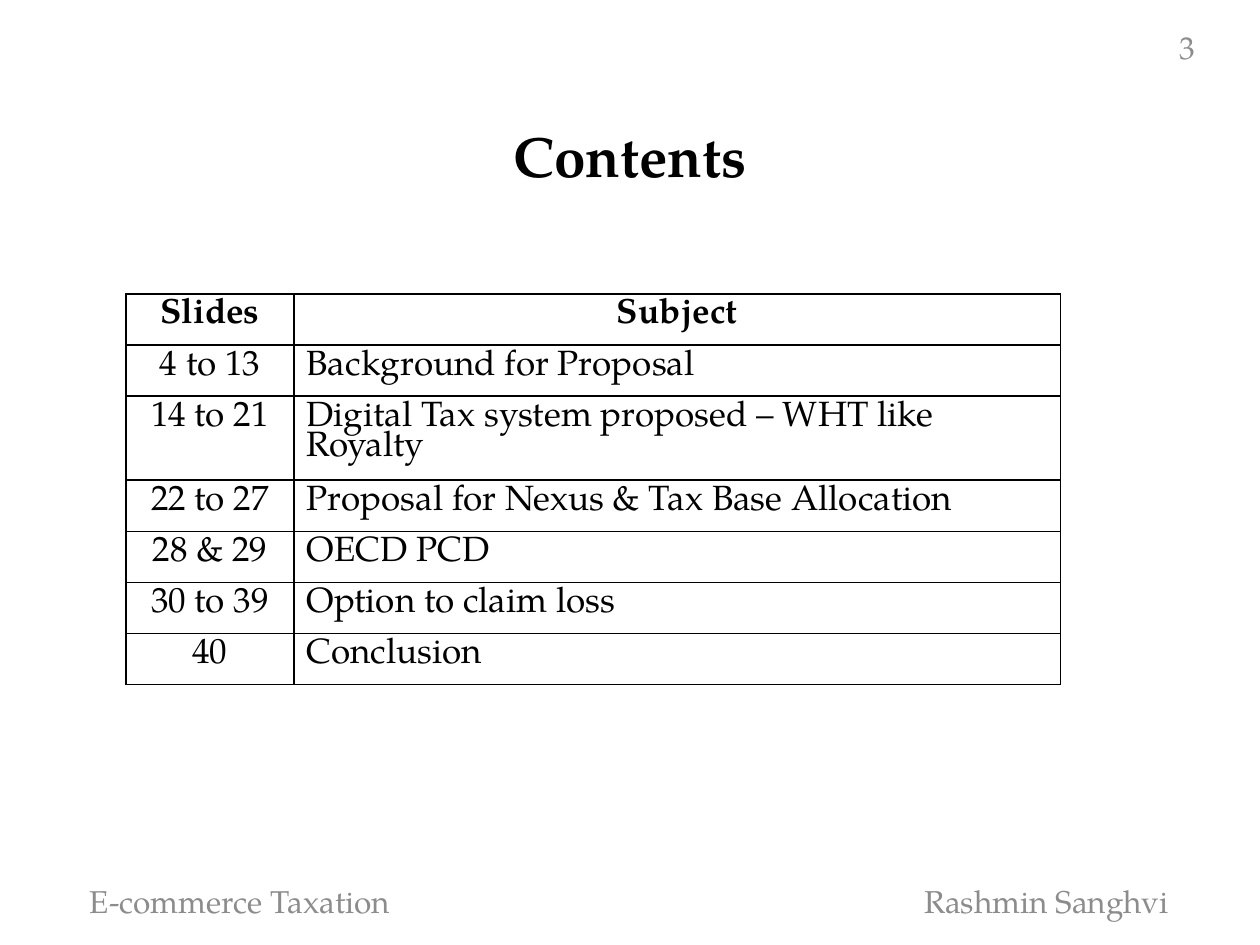
from lxml.etree import SubElement
from pptx import Presentation
from pptx.dml.color import RGBColor
from pptx.enum.text import MSO_ANCHOR, PP_ALIGN
from pptx.oxml.ns import qn
from pptx.util import Pt

# Content
TITLE = "Contents"
HEADINGS = ("Slides", "Subject")
CONTENTS = [
    ("4 to 13", "Background for Proposal"),
    ("14 to 21", "Digital Tax system proposed – WHT like Royalty"),
    ("22 to 27", "Proposal for Nexus & Tax Base Allocation"),
    ("28 & 29", "OECD PCD"),
    ("30 to 39", "Option to claim loss"),
    ("40", "Conclusion"),
]
FOOTER = ("E-commerce Taxation", "Rashmin Sanghvi")
PAGE_NUMBER = "3"

# Style
FONT = "TeX Gyre Pagella"
BLACK, GREY = "000000", "8C8C8C"
COLUMN_WIDTHS = (96, 438)
ROW_HEIGHT, TALL_ROW_HEIGHT = 29.2, 48


def add_run(paragraph, text, size, colour, bold=False):
    run = paragraph.add_run()
    run.text = text
    run.font.name, run.font.size, run.font.bold = FONT, Pt(size), bold
    run.font.color.rgb = RGBColor.from_string(colour)


def add_box(slide, left, top, width, height, inset=7.2):
    frame = slide.shapes.add_textbox(Pt(left), Pt(top), Pt(width), Pt(height)).text_frame
    frame.word_wrap = True
    frame.vertical_anchor = MSO_ANCHOR.MIDDLE
    frame.margin_left = frame.margin_right = Pt(inset)
    return frame.paragraphs[0]


def add_borders(cell):
    properties = cell._tc.get_or_add_tcPr()
    for side in ("a:lnL", "a:lnR", "a:lnT", "a:lnB"):
        line = SubElement(properties, qn(side), w=str(Pt(1)))
        fill = SubElement(line, qn("a:solidFill"))
        SubElement(fill, qn("a:srgbClr"), val=BLACK)


def fill_cell(cell, text, centred, bold):
    add_borders(cell)
    cell.fill.background()
    paragraph = cell.text_frame.paragraphs[0]
    paragraph.alignment = PP_ALIGN.CENTER if centred else PP_ALIGN.LEFT
    paragraph.line_spacing = 0.85
    add_run(paragraph, text, 20, BLACK, bold)


def main():
    presentation = Presentation()
    presentation.slide_width, presentation.slide_height = Pt(720), Pt(540)
    slide = presentation.slides.add_slide(presentation.slide_layouts[5])

    # Title
    title = slide.shapes.title
    title.left, title.top, title.width, title.height = Pt(36), Pt(21.6), Pt(648), Pt(90)
    title.text_frame.vertical_anchor = MSO_ANCHOR.BOTTOM
    heading = title.text_frame.paragraphs[0]
    heading.alignment = PP_ALIGN.CENTER
    add_run(heading, TITLE, 32.4, BLACK, bold=True)

    # Table of contents
    rows = [HEADINGS, *CONTENTS]
    table = slide.shapes.add_table(
        len(rows), len(HEADINGS), Pt(72), Pt(168),
        Pt(sum(COLUMN_WIDTHS)), Pt(ROW_HEIGHT * len(rows))).table
    for column, width in zip(table.columns, COLUMN_WIDTHS):
        column.width = Pt(width)
    for r, row in enumerate(rows):
        wraps = len(row[1]) > 40
        table.rows[r].height = Pt(TALL_ROW_HEIGHT if wraps else ROW_HEIGHT)
        for c, text in enumerate(row):
            fill_cell(table.cell(r, c), text, centred=r == 0 or c == 0, bold=r == 0)

    # Footer, with its second part on a right tab stop
    footer = add_box(slide, 24, 500.4, 672, 28.8, inset=27.4)
    tabs = SubElement(footer._p.get_or_add_pPr(), qn("a:tabLst"))
    SubElement(tabs, qn("a:tab"), pos=str(Pt(616.5)), algn="r")
    add_run(footer, "\t".join(FOOTER), 18, GREY)

    # Page number
    number = add_box(slide, 522, 12.2, 168, 28.8)
    number.alignment = PP_ALIGN.RIGHT
    add_run(number, PAGE_NUMBER, 18, GREY)

    presentation.save("out.pptx")


if __name__ == "__main__":
    main()
